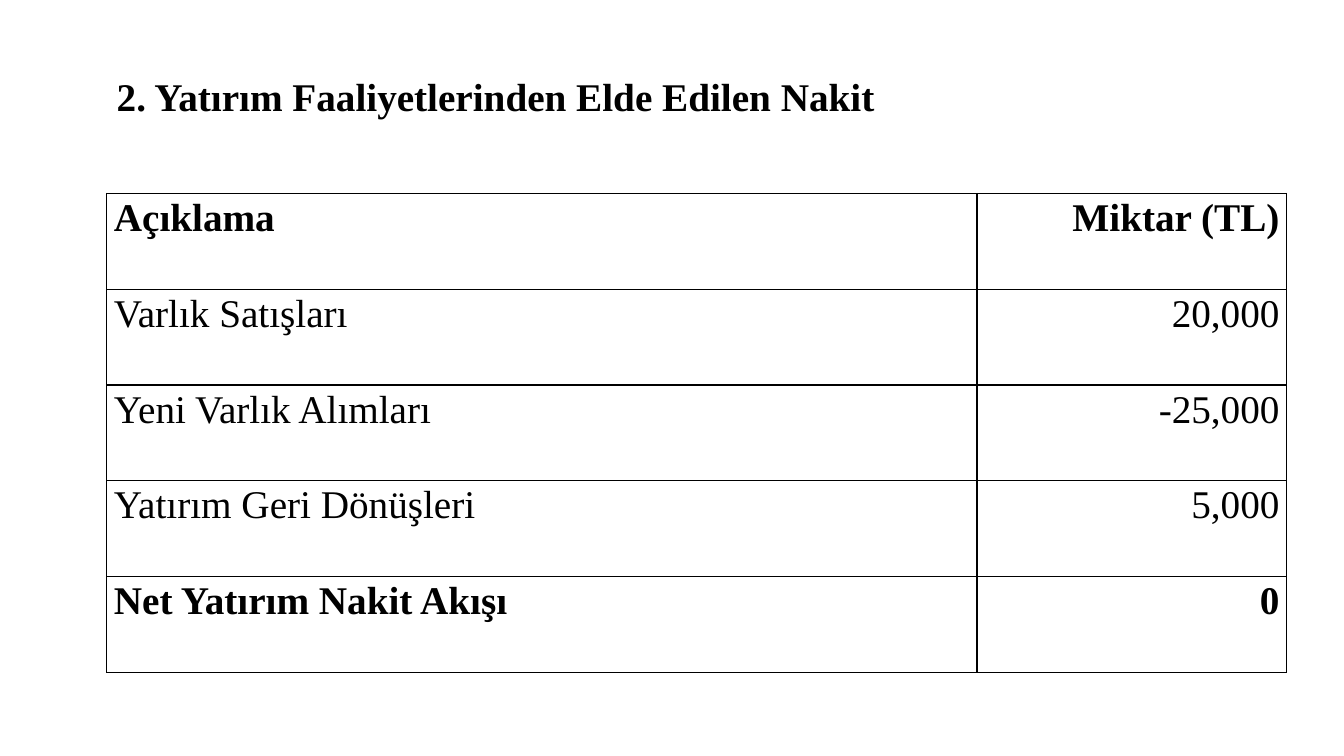
from dataclasses import dataclass

from lxml import etree
from pptx import Presentation
from pptx.dml.color import RGBColor
from pptx.enum.text import MSO_ANCHOR, PP_ALIGN
from pptx.oxml.ns import qn
from pptx.util import Inches, Pt

JUSTIFY = PP_ALIGN.JUSTIFY
RIGHT = PP_ALIGN.RIGHT
TOP = MSO_ANCHOR.TOP
MIDDLE = MSO_ANCHOR.MIDDLE


@dataclass(frozen=True)
class Theme:
    """Colours, font and sizes of the slide."""
    ink: str = "000000"
    paper: str = "FFFFFF"
    font: str = "Times New Roman"
    text_size: int = 28
    border_width: int = 1


THEME = Theme()
TITLE = "2. Yatırım Faaliyetlerinden Elde Edilen Nakit"
CASH_ROWS = [
    ("Açıklama", "Miktar (TL)"),
    ("Varlık Satışları", "20,000"),
    ("Yeni Varlık Alımları", "-25,000"),
    ("Yatırım Geri Dönüşleri", "5,000"),
    ("Net Yatırım Nakit Akışı", "0"),
]


def write_run(paragraph, text, alignment, bold):
    """Add one styled run to an aligned paragraph."""
    paragraph.alignment = alignment
    run = paragraph.add_run()
    run.text = text
    run.font.name = THEME.font
    run.font.size = Pt(THEME.text_size)
    run.font.bold = bold
    run.font.color.rgb = RGBColor.from_string(THEME.ink)


def draw_borders(cell):
    """Draw a thin line on all four sides of a cell."""
    properties = cell._tc.get_or_add_tcPr()
    for position, side in enumerate(("a:lnL", "a:lnR", "a:lnT", "a:lnB")):
        line = etree.Element(qn(side), w=str(Pt(THEME.border_width)))
        fill = etree.SubElement(line, qn("a:solidFill"))
        etree.SubElement(fill, qn("a:srgbClr"), val=THEME.ink)
        properties.insert(position, line)


def add_title(slide, left, top, width, height):
    """Place the heading in the given box."""
    shape = slide.shapes.add_textbox(left, top, width, height)
    frame = shape.text_frame
    frame.word_wrap = True
    frame.vertical_anchor = MIDDLE
    write_run(frame.paragraphs[0], TITLE, JUSTIFY, True)


def fill_cell(cell, text, alignment, bold):
    """Style one table cell and write its text."""
    cell.fill.background()
    cell.vertical_anchor = TOP
    cell.margin_left = cell.margin_right = Inches(0.07)
    cell.margin_top = cell.margin_bottom = 0
    paragraph = cell.text_frame.paragraphs[0]
    paragraph.line_spacing = 1.07
    paragraph.space_after = Pt(8)
    write_run(paragraph, text, alignment, bold)
    draw_borders(cell)


def add_cash_table(slide, left, top, width, height):
    """Place the cash flow table in the given box."""
    last = len(CASH_ROWS) - 1
    shape = slide.shapes.add_table(len(CASH_ROWS), 2, left, top, width, height)
    table = shape.table
    table.first_row = False
    table.horz_banding = False
    amount_width = Inches(3.07)
    table.columns[0].width = width - amount_width
    table.columns[1].width = amount_width
    for row, texts in enumerate(CASH_ROWS):
        for column, alignment in enumerate((JUSTIFY, RIGHT)):
            fill_cell(table.cell(row, column), texts[column], alignment, row in (0, last))


def main():
    """Build and save the presentation."""
    presentation = Presentation()
    presentation.slide_width = Inches(13.33)
    presentation.slide_height = Inches(7.5)
    slide = presentation.slides.add_slide(presentation.slide_layouts[6])
    background = slide.background.fill
    background.solid()
    background.fore_color.rgb = RGBColor.from_string(THEME.paper)
    left, width = Inches(1.06), Inches(11.7)
    add_cash_table(slide, left, Inches(1.92), width, Inches(4.75))
    add_title(slide, left, Inches(0.67), width, Inches(0.57))
    presentation.save("out.pptx")


if __name__ == "__main__":
    main()
